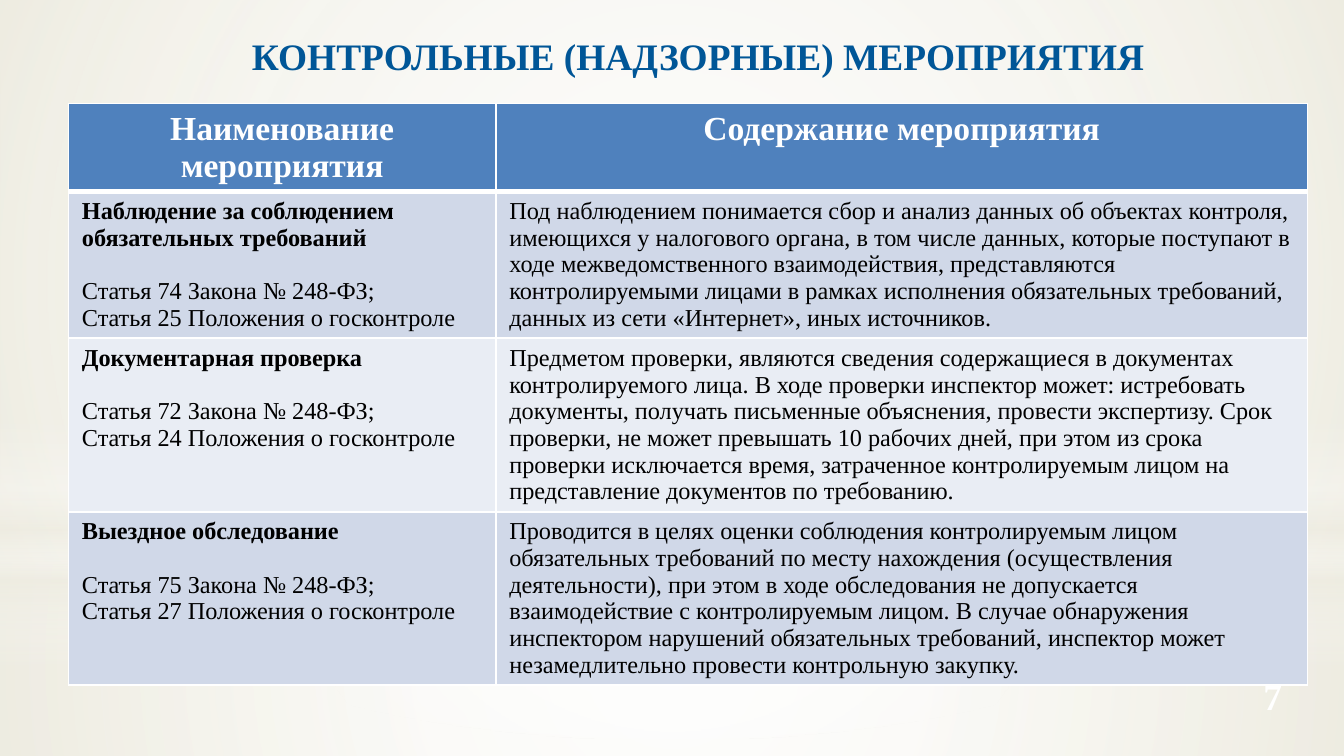
import pptx
import pptx.dml.color
import pptx.enum.shapes
import pptx.enum.text
import pptx.oxml
import pptx.oxml.ns
import pptx.util

Inches, Pt = pptx.util.Inches, pptx.util.Pt
RGBColor = pptx.dml.color.RGBColor
Shape = pptx.enum.shapes.MSO_SHAPE
Align = pptx.enum.text.PP_ALIGN
Anchor = pptx.enum.text.MSO_ANCHOR
qn = pptx.oxml.ns.qn
NAMESPACE = pptx.oxml.ns.nsdecls("a")

FONT = "Times New Roman"
WHITE = RGBColor(0xFF, 0xFF, 0xFF)
BLACK = RGBColor(0, 0, 0)
CREAM = RGBColor(0xEE, 0xEC, 0xE1)
HEADER_BLUE = RGBColor(0x4F, 0x81, 0xBD)
BAND_DARK = RGBColor(0xD0, 0xD8, 0xE8)
BAND_LIGHT = RGBColor(0xE9, 0xED, 0xF4)
TITLE_DARK = RGBColor(0x00, 0x3C, 0x6A)
TITLE_BLUE = RGBColor(0x00, 0x56, 0x97)
TITLE_LIGHT = RGBColor(0x00, 0x66, 0xB3)

# Gradient directions
FROM_MIDDLE = ('<a:path path="circle">'
               '<a:fillToRect l="50000" t="50000" r="50000" b="50000"/></a:path>')
FROM_CORNER = '<a:path path="circle"><a:fillToRect r="100000" b="100000"/></a:path>'
DOWNWARD = '<a:lin ang="5400000" scaled="0"/>'

# Background layers: shape, top, height, direction, stops (position, colour, opacity)
LAYERS = [
    (Shape.RECTANGLE, 4.19, 1.44, FROM_MIDDLE,
     [(0, WHITE, 91), (37, WHITE, 76), (100, CREAM, 79)]),
    (Shape.RECTANGLE, 0, 4.19, FROM_MIDDLE,
     [(0, WHITE, 89), (48, WHITE, 62), (100, CREAM, 79)]),
    (Shape.RECTANGLE, 3.09, 1.88, DOWNWARD,
     [(0, WHITE, 0), (29, WHITE, 30), (45, CREAM, 40),
      (55, WHITE, 26), (65, CREAM, 60), (100, WHITE, 0)]),
    (Shape.OVAL, 1.31, 4.19, FROM_MIDDLE, [(0, WHITE, 100), (56, WHITE, 0)]),
]

HEADERS = ["Наименование мероприятия", "Содержание мероприятия"]
# Name, article of the law, article of the regulation, content
MEASURES = [
    ("Наблюдение за соблюдением обязательных требований", 74, 25,
     "Под наблюдением понимается сбор и анализ данных об объектах контроля, "
     "имеющихся у налогового органа, в том числе данных, которые поступают в ходе "
     "межведомственного взаимодействия, представляются контролируемыми лицами в "
     "рамках исполнения обязательных требований, данных из сети «Интернет», иных "
     "источников."),
    ("Документарная проверка", 72, 24,
     "Предметом проверки, являются сведения содержащиеся в документах "
     "контролируемого лица. В ходе проверки инспектор может: истребовать документы, "
     "получать письменные объяснения, провести экспертизу. Срок проверки, не может "
     "превышать 10 рабочих дней, при этом из срока проверки исключается время, "
     "затраченное контролируемым лицом на представление документов по требованию."),
    ("Выездное обследование", 75, 27,
     "Проводится в целях оценки соблюдения контролируемым лицом обязательных "
     "требований по месту нахождения (осуществления деятельности), при этом в ходе "
     "обследования не допускается взаимодействие с контролируемым лицом. В случае "
     "обнаружения инспектором нарушений обязательных требований, инспектор может "
     "незамедлительно провести контрольную закупку."),
]
COLUMN_WIDTHS = [3.18, 6.04]
ROW_HEIGHTS = [0.65, 1.09, 1.29, 1.29]


def set_gradient(fill, properties, direction, stops):
    """Give a shape or run a gradient with any direction and opacity."""
    stop_xml = "".join(
        f'<a:gs pos="{position * 1000}"><a:srgbClr val="{colour}">'
        f'<a:alpha val="{opacity * 1000}"/></a:srgbClr></a:gs>'
        for position, colour, opacity in stops)
    gradient = pptx.oxml.parse_xml(
        f'<a:gradFill {NAMESPACE} rotWithShape="1">'
        f'<a:gsLst>{stop_xml}</a:gsLst>{direction}</a:gradFill>')
    fill.background()
    properties.replace(properties.find(qn("a:noFill")), gradient)


def add_text(para, text, size, colour, bold=False, align=Align.LEFT):
    para.alignment = align
    span = para.add_run()
    span.text = text
    span.font.name = FONT
    span.font.size = Pt(size)
    span.font.bold = bold
    span.font.color.rgb = colour
    return span


def add_background(deck, page):
    """Build the layers and move them to the back of the slide master."""
    master = deck.slide_master
    master.background.fill.solid()
    master.background.fill.fore_color.rgb = CREAM
    first_placeholder = master.placeholders[0].element
    for number, (kind, top, height, direction, stops) in enumerate(LAYERS, 1):
        layer = page.shapes.add_shape(
            kind, 0, Inches(top), Inches(10), Inches(height))
        layer.shadow.inherit = False
        layer.line.fill.background()
        set_gradient(layer.fill, layer.element.spPr, direction, stops)
        layer.element.nvSpPr.cNvPr.set("id", str(100 + number))
        first_placeholder.addprevious(layer.element)


def set_title(page, text):
    title = page.shapes.title
    title.left, title.top = Inches(0.59), Inches(0.21)
    title.width, title.height = Inches(9.21), Inches(0.57)
    frame = title.text_frame
    frame.auto_size = pptx.enum.text.MSO_AUTO_SIZE.NONE
    frame.vertical_anchor = Anchor.TOP
    frame.margin_left = frame.margin_right = Inches(0.09)
    frame.margin_top = frame.margin_bottom = Inches(0.04)
    span = add_text(frame.paragraphs[0], text, 20, TITLE_BLUE, True, Align.CENTER)
    set_gradient(span.font.fill, span.font._element, FROM_CORNER,
                 [(0, TITLE_DARK, 100), (50, TITLE_BLUE, 100), (100, TITLE_LIGHT, 100)])


def style_cell(cell, colour, top=1, bottom=1):
    cell.fill.solid()
    cell.fill.fore_color.rgb = colour
    properties = cell._tc.get_or_add_tcPr()
    for index, (side, width) in enumerate(
            [("L", 1), ("R", 1), ("T", top), ("B", bottom)]):
        properties.insert(index, pptx.oxml.parse_xml(
            f'<a:ln{side} {NAMESPACE} w="{Pt(width)}"><a:solidFill>'
            f'<a:srgbClr val="{WHITE}"/></a:solidFill></a:ln{side}>'))


def add_measures_table(page):
    table = page.shapes.add_table(
        len(MEASURES) + 1, len(HEADERS), Inches(0.51), Inches(0.77),
        Inches(sum(COLUMN_WIDTHS)), Inches(sum(ROW_HEIGHTS))).table
    for column, width in zip(table.columns, COLUMN_WIDTHS):
        column.width = Inches(width)
    for row, height in zip(table.rows, ROW_HEIGHTS):
        row.height = Inches(height)

    # Header row
    for cell, text in zip(table.rows[0].cells, HEADERS):
        style_cell(cell, HEADER_BLUE, bottom=3)
        add_text(cell.text_frame.paragraphs[0], text, 18, WHITE, True, Align.CENTER)

    # One row for each measure
    for number, (name, law, regulation, content) in enumerate(MEASURES, 1):
        name_cell, content_cell = table.rows[number].cells
        for cell in (name_cell, content_cell):
            style_cell(cell, BAND_DARK if number % 2 else BAND_LIGHT,
                       top=3 if number == 1 else 1)
        frame = name_cell.text_frame
        add_text(frame.paragraphs[0], name, 13, BLACK, True)
        law_para = frame.add_paragraph()
        law_para.space_before = Pt(14.3)
        add_text(law_para, f"Статья {law} Закона № 248-ФЗ;", 13, BLACK)
        add_text(frame.add_paragraph(),
                 f"Статья {regulation} Положения о госконтроле", 13, BLACK)
        add_text(content_cell.text_frame.paragraphs[0], content, 13, BLACK)


def add_page_number(page, number):
    box = page.shapes.add_textbox(
        Inches(9.13), Inches(4.97), Inches(0.68), Inches(0.52))
    frame = box.text_frame
    frame.word_wrap = True
    frame.vertical_anchor = Anchor.MIDDLE
    para = frame.paragraphs[0]
    para.line_spacing = Pt(15.8)
    add_text(para, number, 20, WHITE, True, Align.CENTER)


def main():
    deck = pptx.Presentation()
    # Widescreen page, 16 to 9
    deck.slide_width = Inches(10)
    deck.slide_height = Inches(10 * 9 / 16)
    page = deck.slides.add_slide(deck.slide_layouts[5])
    add_background(deck, page)
    set_title(page, "КОНТРОЛЬНЫЕ (НАДЗОРНЫЕ) МЕРОПРИЯТИЯ")
    add_measures_table(page)
    add_page_number(page, "7")
    deck.save("out.pptx")


if __name__ == "__main__":
    main()
